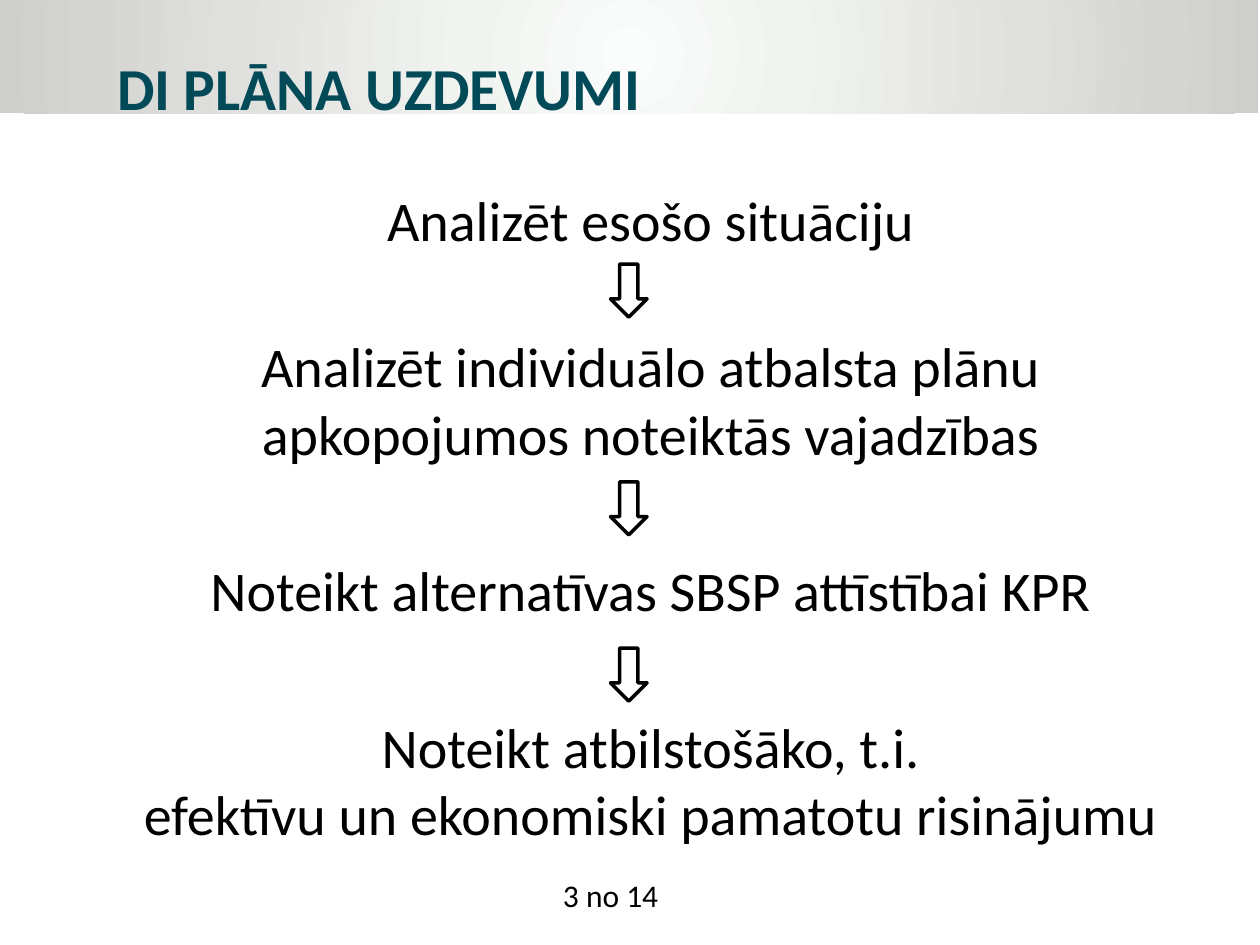
from lxml import etree
from pptx import Presentation
from pptx import util as u
from pptx.dml.color import RGBColor
from pptx.enum import shapes, text
from pptx.oxml import parse_xml
from pptx.oxml.ns import nsdecls, qn

STEPS = [  # text ("~" is a no-break space), space before in points
    ("Analizēt esošo situāciju", 6),
    ("Analizēt individuālo atbalsta plānu apkopojumos noteiktās vajadzības", 45),
    ("Noteikt alternatīvas SBSP attīstībai KPR", 51),
    ("Noteikt~atbilstošāko, t.i. efektīvu~un~ekonomiski pamatotu risinājumu", 51),
]
ARROWS = [5.49, 9.88, 13.23]
GLOW = [(0, "FBFCFC"), (26, "F1F3F1"), (100, "CECECA")]


def color(code):
    return RGBColor.from_string(code)


def write(par, words, size=32, ink="000000", bold=False,
          align=text.PP_ALIGN.LEFT, before=0):
    par.alignment = align
    par.space_before = u.Pt(before)
    run = par.add_run()
    run.text = words.replace("~", chr(160))
    font = run.font
    font.name, font.size, font.bold = "Calibri", u.Pt(size), bold
    font.color.rgb = color(ink)


class Deck:
    ink, paper, accent = "000000", "FFFFFF", "034A58"

    def __init__(self):
        self.prs = Presentation()
        self.prs.slide_width, self.prs.slide_height = u.Cm(25.4), u.Cm(19.05)
        self.slide = self.prs.slides.add_slide(self.prs.slide_layouts[1])

    def place(self, item, box, anchor=text.MSO_ANCHOR.TOP):
        item.left, item.top, item.width, item.height = map(u.Cm, box)
        frame = item.text_frame
        frame.word_wrap = True
        frame.auto_size = text.MSO_AUTO_SIZE.NONE
        frame.vertical_anchor = anchor
        return frame

    def shape(self, kind, *box):
        item = self.slide.shapes.add_shape(kind, *map(u.Cm, box))
        item.shadow.inherit = False
        return item

    def band(self, *box):
        item = self.shape(shapes.MSO_SHAPE.RECTANGLE, *box)
        item.line.fill.background()
        stops = "".join(f'<a:gs pos="{pos * 1000}"><a:srgbClr val="{code}"/></a:gs>'
                        for pos, code in GLOW)
        grad = parse_xml(
            f'<a:gradFill {nsdecls("a")}><a:gsLst>{stops}</a:gsLst>'
            '<a:path path="circle"><a:fillToRect l="50000" t="50000" '
            'r="50000" b="50000"/></a:path></a:gradFill>')
        item.element.spPr.find(qn("a:prstGeom")).addnext(grad)
        item.element.getparent().insert(2, item.element)  # send to back

    def title(self, words, *box):
        frame = self.place(self.slide.shapes.title, box)
        write(frame.paragraphs[0], words, size=34, ink=self.accent, bold=True)

    def steps(self, items, *box):
        frame = self.place(self.slide.placeholders[1], box, text.MSO_ANCHOR.MIDDLE)
        for i, (words, gap) in enumerate(items):
            par = frame.add_paragraph() if i else frame.paragraphs[0]
            write(par, words, ink=self.ink, align=text.PP_ALIGN.CENTER, before=gap)
            props = par._p.get_or_add_pPr()
            props.set("marL", "0")
            props.set("indent", "0")
            etree.SubElement(props, qn("a:buNone"))

    def label(self, words, *box):
        item = self.slide.shapes.add_textbox(*map(u.Cm, box))
        write(self.place(item, box).paragraphs[0], words, size=18, ink=self.ink)

    def arrow(self, top):
        item = self.shape(shapes.MSO_SHAPE.RIGHT_ARROW, 12.14, top, 1.07, 0.74)
        item.rotation = 90
        item.fill.solid()
        item.fill.fore_color.rgb = color(self.paper)
        item.line.color.rgb = color(self.ink)
        item.line.width = u.Pt(2)


def main():
    deck = Deck()
    # Header
    deck.band(0, -0.08, 25.37, 2.36)
    deck.title("DI PLĀNA UZDEVUMI", 2.11, 0.91, 22.02, 1.7)
    # Steps joined by arrows
    deck.steps(STEPS, 2.11, 3.28, 22.02, 14.25)
    for top in ARROWS:
        deck.arrow(top)
    # Page count
    deck.label("3 no 14", 11.1, 17.53, 4.8, 1.02)
    deck.prs.save("out.pptx")


if __name__ == "__main__":
    main()
